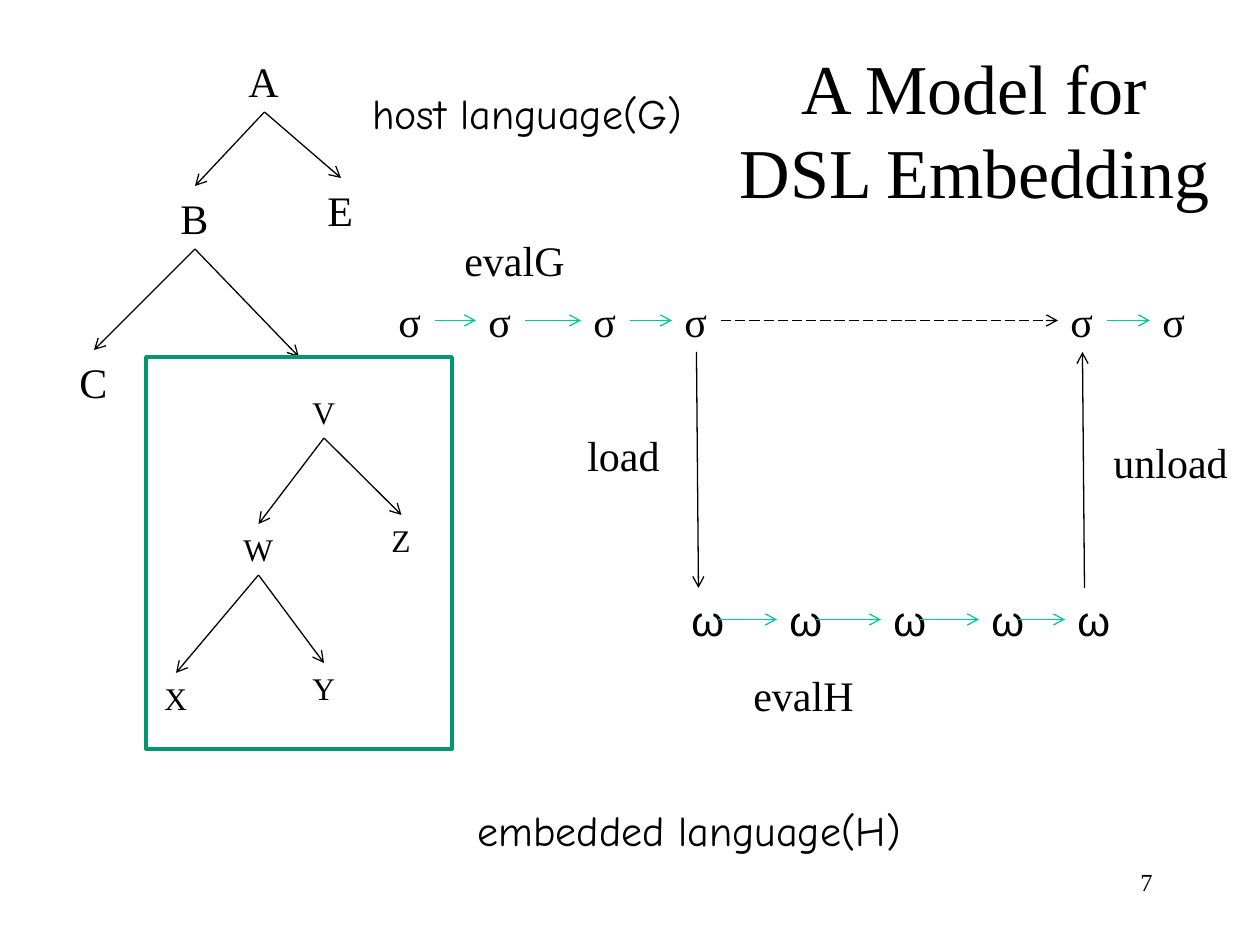
from dataclasses import dataclass
from itertools import pairwise

from lxml import etree
from pptx import Presentation
from pptx.dml.color import RGBColor
from pptx.enum.dml import MSO_LINE
from pptx.enum.shapes import MSO_CONNECTOR, MSO_SHAPE
from pptx.enum.text import MSO_ANCHOR, MSO_AUTO_SIZE, PP_ALIGN
from pptx.oxml.ns import qn
from pptx.util import Emu, Pt

STRAIGHT = MSO_CONNECTOR.STRAIGHT
RECTANGLE = MSO_SHAPE.RECTANGLE
LONG_DASH = MSO_LINE.LONG_DASH
MIDDLE = MSO_ANCHOR.MIDDLE
NO_AUTOFIT = MSO_AUTO_SIZE.NONE
LEFT, CENTER, RIGHT = PP_ALIGN.LEFT, PP_ALIGN.CENTER, PP_ALIGN.RIGHT

PX_PER_INCH = 126
LABEL_HEIGHT = 63


@dataclass(frozen=True)
class Theme:
    ink: RGBColor = RGBColor(0x00, 0x00, 0x00)
    step: RGBColor = RGBColor(0x00, 0xC8, 0x96)
    frame: RGBColor = RGBColor(0x00, 0x97, 0x71)
    serif: str = "Times New Roman"
    sans: str = "Arial"
    casual: str = "Comic Neue"
    title_size: int = 40
    label_size: int = 24
    small_size: int = 18
    number_size: int = 14
    arrow_width: float = 0.75
    frame_width: float = 2


THEME = Theme()


def px(length):
    return Emu(round(length * 914400 / PX_PER_INCH))


def style_text(text_frame, text, size, font, alignment):
    text_frame.text = text
    paragraph = text_frame.paragraphs[0]
    paragraph.alignment = alignment
    paragraph.font.size = Pt(size)
    paragraph.font.name = font
    paragraph.font.color.rgb = THEME.ink


def add_label(slide, text, box, size=THEME.label_size, font=THEME.serif,
              alignment=LEFT, wrap=False):
    text_box = slide.shapes.add_textbox(*map(px, box))
    text_box.text_frame.word_wrap = wrap
    style_text(text_box.text_frame, text, size, font, alignment)


def add_arrow(slide, start, end, color=THEME.ink, dash=None):
    arrow = slide.shapes.add_connector(STRAIGHT, *map(px, (*start, *end)))
    arrow.line.color.rgb = color
    arrow.line.width = Pt(THEME.arrow_width)
    if dash is not None:
        arrow.line.dash_style = dash
    etree.SubElement(arrow.line._get_or_add_ln(), qn("a:tailEnd"), type="arrow")
    etree.SubElement(arrow._element.spPr, qn("a:effectLst"))


def add_title(slide, text, box):
    title = slide.shapes.title
    title.left, title.top, title.width, title.height = map(px, box)
    frame = title.text_frame
    frame.word_wrap = True
    frame.auto_size = NO_AUTOFIT
    frame.vertical_anchor = MIDDLE
    style_text(frame, text, THEME.title_size, THEME.serif, CENTER)


def add_tree(slide, origin, nodes, edges, size, height):
    """Place nodes (left, top, width) and join them; return their bottom points."""
    tops, bottoms = {}, {}
    for name, (left, top, width) in nodes.items():
        x, y = origin[0] + left, origin[1] + top
        add_label(slide, name, (x, y, width, height), size)
        tops[name] = (x + width / 2, y)
        bottoms[name] = (x + width / 2, y + height)
    for parent, child in edges:
        add_arrow(slide, bottoms[parent], tops[child])
    return bottoms


def add_frame(slide, box):
    frame = slide.shapes.add_shape(RECTANGLE, *map(px, box))
    frame.shadow.inherit = False
    frame.fill.background()
    frame.line.color.rgb = THEME.frame
    frame.line.width = Pt(THEME.frame_width)


def add_states(slide, symbol, lefts, top, width, font, gap_after=None):
    """Place a row of states with step arrows; a dashed one spans the gap."""
    middle = top + LABEL_HEIGHT / 2
    for left in lefts:
        add_label(slide, symbol, (left, top, width, LABEL_HEIGHT), font=font, wrap=True)
    for index, (left, following) in enumerate(pairwise(lefts)):
        is_gap = index == gap_after
        add_arrow(slide, (left + width, middle), (following, middle),
                  THEME.ink if is_gap else THEME.step,
                  LONG_DASH if is_gap else None)
    return [left + width / 2 for left in lefts]


def add_evaluation(slide, box):
    """Host states above, embedded states below, joined by load and unload."""
    x, y, _, height = box
    host_bottom, embedded_top = y + LABEL_HEIGHT, y + height - LABEL_HEIGHT
    host = add_states(slide, "σ", [x + dx for dx in (0, 90, 195, 286, 672, 764)],
                      y, 49, THEME.serif, gap_after=3)
    embedded = add_states(slide, "ω", [x + dx for dx in (293, 391, 495, 593, 679)],
                          embedded_top, 39, THEME.sans)
    add_arrow(slide, (host[3], host_bottom), (embedded[0], embedded_top))
    add_arrow(slide, (embedded[-1], embedded_top), (host[4], host_bottom))
    for text, dx, dy, width in (("evalG", 66, -61, 126), ("load", 189, 134, 98),
                                ("unload", 715, 141, 141), ("evalH", 355, 374, 126)):
        add_label(slide, text, (x + dx, y + dy, width, LABEL_HEIGHT))


def main():
    presentation = Presentation()
    presentation.slide_width, presentation.slide_height = px(1260), px(945)
    slide = presentation.slides.add_slide(presentation.slide_layouts[5])
    add_title(slide, "A Model for DSL Embedding", (722, 50, 505, 158))

    # Host syntax tree, whose last branch leads to the embedded tree
    host_bottoms = add_tree(
        slide, (67, 49),
        {"A": (169, 0, 57), "B": (101, 137, 54), "C": (0, 301, 54), "E": (248, 129, 52)},
        ("AB", "BC", "AE"), THEME.label_size, LABEL_HEIGHT)
    frame_box = (146, 357, 306, 392)
    left, top, width, _ = frame_box
    add_arrow(slide, host_bottoms["B"], (left + width / 2, top))

    # Embedded syntax tree
    add_tree(
        slide, (left, top),
        {"V": (154, 30, 48), "W": (85, 167, 55), "X": (6, 316, 48),
         "Y": (154, 306, 48), "Z": (233, 158, 45)},
        ("VW", "WX", "WY", "VZ"), THEME.small_size, 51)
    add_frame(slide, frame_box)

    # Evaluation diagram
    add_evaluation(slide, (386, 289, 813, 362))

    # Language captions and slide number
    add_label(slide, "host language(G)", (360, 81, 353, LABEL_HEIGHT), font=THEME.casual)
    add_label(slide, "embedded language(H)", (465, 798, 471, LABEL_HEIGHT), font=THEME.casual)
    add_label(slide, "7", (903, 861, 262, LABEL_HEIGHT), THEME.number_size,
              alignment=RIGHT, wrap=True)

    presentation.save("out.pptx")


if __name__ == "__main__":
    main()
